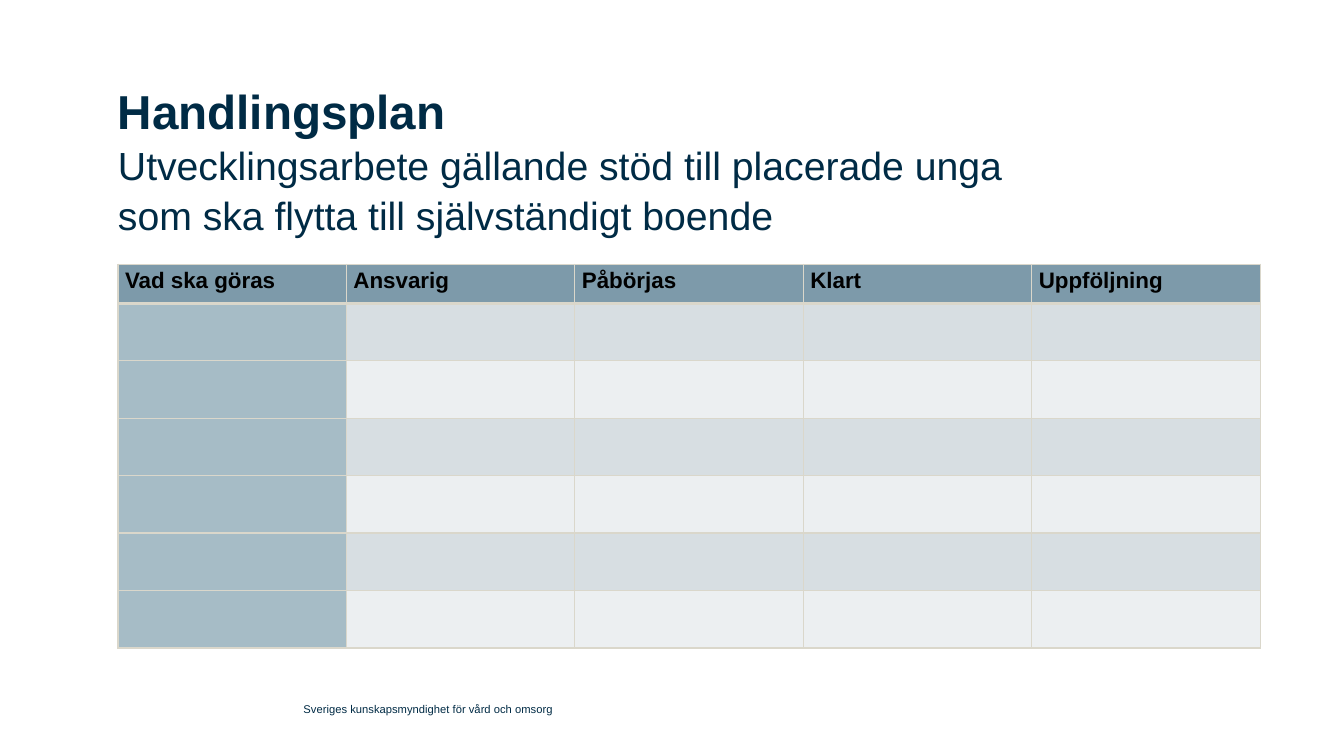
"""Build the action plan slide with its title, planning table and footer."""
import copy
from dataclasses import dataclass

import pptx
import pptx.dml.color
import pptx.enum.text
import pptx.oxml
import pptx.oxml.ns
import pptx.util

PX = 9144
FONT = "Arial"
COLORS = {
    "navy": "002B45",
    "black": "000000",
    "header": "7D9AAA",
    "first": "A6BCC6",
    "odd": "D7DEE2",
    "even": "ECEFF1",
    "border": "DAD7CB",
}
HEADINGS = ["Vad ska göras", "Ansvarig", "Påbörjas", "Klart", "Uppföljning"]
BODY_ROWS = 6
HEADER_H, BODY_H = 39, 57


@dataclass
class Box:
    left: int
    top: int
    width: int
    height: int

    def emu(self) -> list[int]:
        return [v * PX for v in (self.left, self.top, self.width, self.height)]


TITLE = Box(117, 75, 1014, 142)
FOOTER = Box(301, 689, 591, 29)
TABLE = Box(117, 262, 1133, HEADER_H + BODY_ROWS * BODY_H)


def rgb(name: str) -> pptx.dml.color.RGBColor:
    return pptx.dml.color.RGBColor.from_string(COLORS[name])


def add_text(p, text: str, *, size: int, color: str = "navy", bold: bool = False) -> None:
    for i, line in enumerate(text.split("\n")):
        if i:
            p.add_line_break()
            p._p[-1].append(copy.deepcopy(r._r.rPr))
        r = p.add_run()
        r.text = line
        r.font.name = FONT
        r.font.size = pptx.util.Pt(size)
        r.font.bold = bold
        r.font.color.rgb = rgb(color)


def set_frame(tf, anchor) -> None:
    tf.margin_left = tf.margin_top = tf.margin_right = tf.margin_bottom = 0
    tf.word_wrap = True
    tf.auto_size = pptx.enum.text.MSO_AUTO_SIZE.NONE
    tf.vertical_anchor = anchor


def set_borders(cell, widths: dict[str, int]) -> None:
    tc_pr = cell._tc.get_or_add_tcPr()
    for i, (side, pt) in enumerate(widths.items()):
        tc_pr.insert(i, pptx.oxml.parse_xml(
            f'<a:ln{side} {pptx.oxml.ns.nsdecls("a")} w="{pptx.util.Pt(pt)}">'
            f'<a:solidFill><a:srgbClr val="{COLORS["border"]}"/></a:solidFill>'
            f'</a:ln{side}>'))


def add_title(s) -> None:
    sp = s.shapes.title
    sp.left, sp.top, sp.width, sp.height = TITLE.emu()
    tf = sp.text_frame
    set_frame(tf, pptx.enum.text.MSO_ANCHOR.TOP)
    p = tf.paragraphs[0]
    p.alignment = pptx.enum.text.PP_ALIGN.LEFT
    p.line_spacing = 1.05
    add_text(p, "Handlingsplan", size=34, bold=True)
    add_text(p, " \n", size=36, bold=True)
    add_text(p, "Utvecklingsarbete gällande stöd till placerade unga \n"
                "som ska flytta till självständigt boende", size=28)


def add_footer(s) -> None:
    tf = s.shapes.add_textbox(*FOOTER.emu()).text_frame
    set_frame(tf, pptx.enum.text.MSO_ANCHOR.MIDDLE)
    add_text(tf.paragraphs[0], "Sveriges kunskapsmyndighet för vård och omsorg", size=8)


def fill_name(row: int, col: int) -> str:
    if row == 0:
        return "header"
    if col == 0:
        return "first"
    return "odd" if row % 2 else "even"


def add_plan(s) -> None:
    table = s.shapes.add_table(BODY_ROWS + 1, len(HEADINGS), *TABLE.emu()).table
    for i, row in enumerate(table.rows):
        row.height = (BODY_H if i else HEADER_H) * PX
        for j, cell in enumerate(row.cells):
            cell.fill.solid()
            cell.fill.fore_color.rgb = rgb(fill_name(i, j))
            set_borders(cell, {"L": 1, "R": 1, "T": 3 if i == 1 else 1, "B": 1 if i else 3})
    for j, heading in enumerate(HEADINGS):
        cell = table.cell(0, j)
        cell.margin_left = cell.margin_right = 7 * PX
        cell.margin_top = cell.margin_bottom = 0
        cell.vertical_anchor = pptx.enum.text.MSO_ANCHOR.MIDDLE
        p = cell.text_frame.paragraphs[0]
        p.line_spacing = pptx.util.Pt(13.2)
        add_text(p, heading, size=16, color="black", bold=True)


def main() -> None:
    prs = pptx.Presentation()
    prs.slide_width, prs.slide_height = 1333 * PX, 750 * PX
    s = prs.slides.add_slide(prs.slide_layouts[5])
    add_title(s)
    add_footer(s)
    add_plan(s)
    prs.save("out.pptx")


if __name__ == "__main__":
    main()
